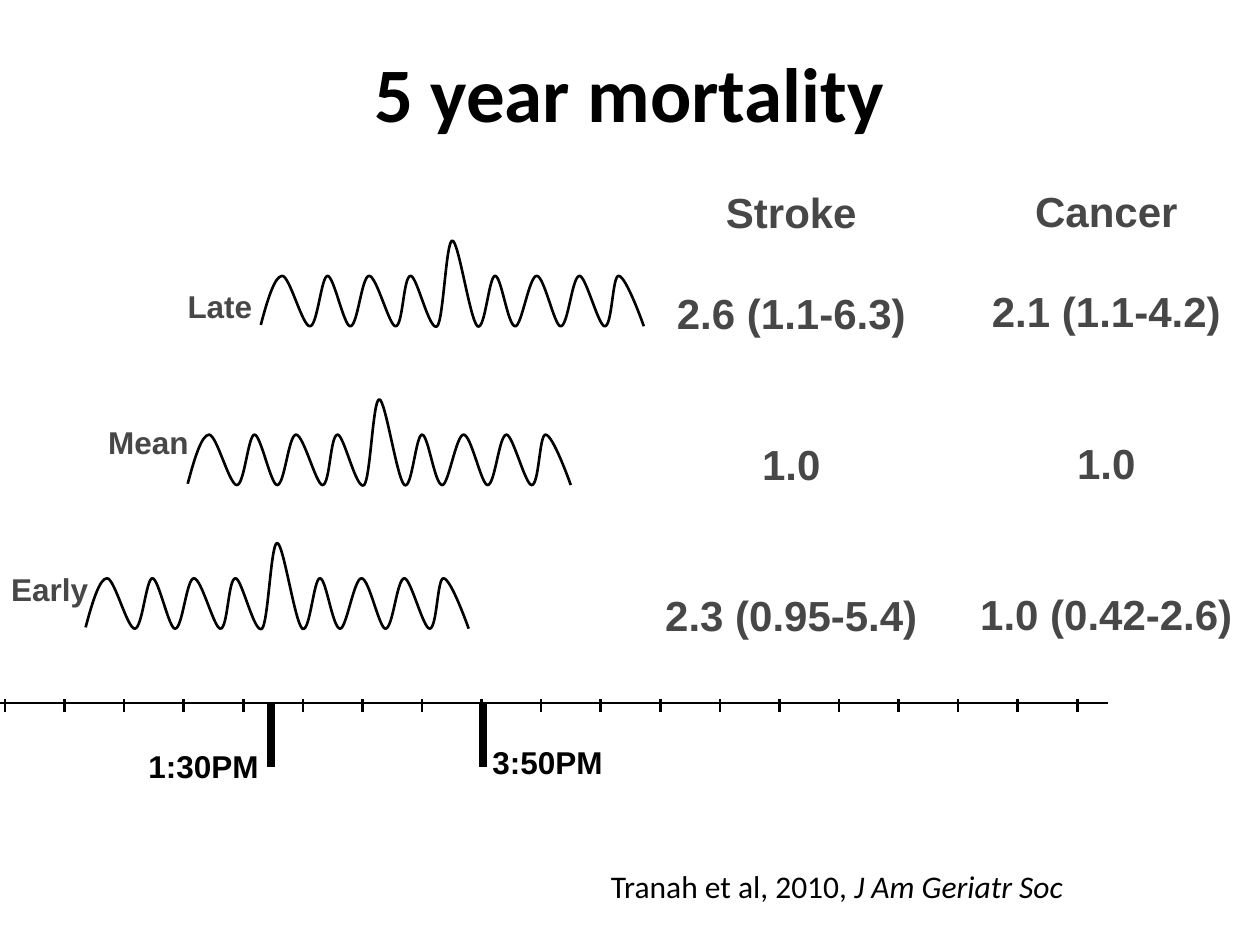
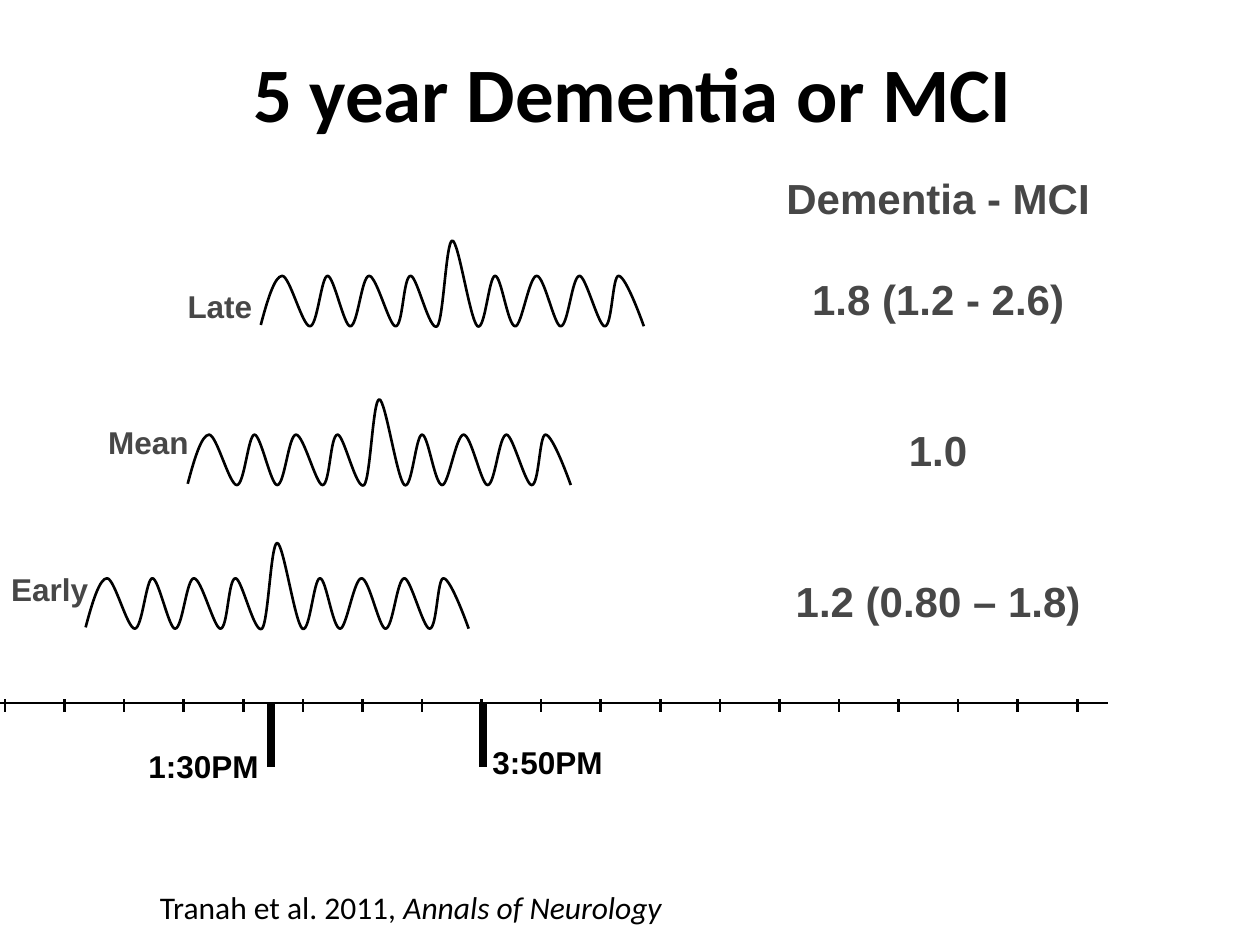
import dataclasses

import lxml.etree
import pptx
import pptx.dml.color
import pptx.enum.shapes
import pptx.enum.text
import pptx.oxml.ns
import pptx.util

PX = 9144
SLIDE_SIZE = (1000, 750)


@dataclasses.dataclass(frozen=True)
class Theme:
    ink: str = "000000"
    grey: str = "474747"
    heading_font: str = "Calibri"
    label_font: str = "Arial"
    title_size: int = 44
    result_size: int = 24
    label_size: int = 18
    blank_line: float = 28.8
    thin: float = 1.5
    thick: float = 4.5


THEME = Theme()

SLIDES = [
    {
        "title": ("5 year mortality", (33, 22, 933, 101)),
        "results": [
            (["Stroke", "2.6 (1.1-6.3)", "1.0", "2.3 (0.95-5.4)"], (514, 143, 228, 374)),
            (["Cancer", "2.1 (1.1-4.2)", "1.0", "1.0 (0.42-2.6)"], (764, 142, 228, 374)),
        ],
        "citation": ("Tranah et al, 2010, ", "J Am Geriatr Soc", (475, 683, 450, 40)),
    },
    {
        "title": ("5 year Dementia or MCI", (4, 22, 996, 101)),
        "results": [
            (["Dementia - MCI", "1.8 (1.2 - 2.6)", "1.0", "1.2 (0.80 – 1.8)"],
             (500, 132, 489, 374)),
        ],
        "citation": ("Tranah et al. 2011, ", "Annals of Neurology", (117, 700, 442, 40)),
    },
]

RHYTHMS = [
    ("Late", (139, 226, 114, 37), (207, 191)),
    ("Mean", (76, 334, 122, 37), (149, 317)),
    ("Early", (-1, 451, 126, 37), (68, 431)),
]
BLANKS_BEFORE_RESULT = [0, 1, 2, 2]

WAVE_START = (0, 67)
WAVE_CURVES = [
    ((5, 48), (11, 28), (17, 28)),
    ((23, 28), (33, 68), (39, 68)),
    ((45, 68), (48, 28), (53, 28)),
    ((58, 28), (66, 68), (71, 68)),
    ((77, 68), (80, 28), (86, 28)),
    ((92, 28), (102, 68), (107, 68)),
    ((113, 68), (113, 28), (119, 28)),
    ((124, 28), (134, 73), (140, 68)),
    ((145, 63), (147, 0), (152, 0)),
    ((157, 0), (166, 63), (172, 68)),
    ((178, 72), (181, 28), (186, 28)),
    ((191, 28), (196, 68), (202, 68)),
    ((207, 68), (213, 28), (219, 28)),
    ((225, 28), (233, 68), (238, 68)),
    ((244, 68), (247, 28), (253, 28)),
    ((258, 28), (268, 68), (273, 68)),
    ((279, 68), (279, 28), (284, 28)),
    ((290, 28), (304, 68), (304, 68)),
]

AXIS = (-3, 558, 879, 558)
TICK_FIRST, TICK_LAST, TICK_COUNT = 4, 855, 19
TICK_TOP, TICK_BOTTOM = 555, 565
MARK_TOP, MARK_BOTTOM = 559, 609
TIME_MARKS = [
    ("3:50PM", 383, (381, 585, 109, 40)),
    ("1:30PM", 215, (108, 588, 109, 40)),
]


def px(*values):
    return [round(v * PX) for v in values]


def rgb(color):
    return pptx.dml.color.RGBColor.from_string(color)


def style_font(font, name, size, color, bold=False):
    font.name = name
    font.size = pptx.util.Pt(size)
    font.color.rgb = rgb(color)
    font.bold = bold


def style_line(line, width):
    line.color.rgb = rgb(THEME.ink)
    line.width = pptx.util.Pt(width)


def add_line(shapes, ends, width):
    line = shapes.add_connector(pptx.enum.shapes.MSO_CONNECTOR.STRAIGHT, *px(*ends))
    style_line(line.line, width)
    lxml.etree.SubElement(line._element.spPr, pptx.oxml.ns.qn("a:effectLst"))


def add_text_frame(shapes, box, wrap=True):
    tf = shapes.add_textbox(*px(*box)).text_frame
    tf.word_wrap = wrap
    tf.auto_size = pptx.enum.text.MSO_AUTO_SIZE.SHAPE_TO_FIT_TEXT
    return tf


def add_label(shapes, text, box, color, wrap=True):
    p = add_text_frame(shapes, box, wrap).paragraphs[0]
    p.text = text
    style_font(p.font, THEME.label_font, THEME.label_size, color, True)
    return p


def set_title(shapes, text, box):
    sp = shapes.title
    sp.left, sp.top, sp.width, sp.height = px(*box)
    tf = sp.text_frame
    tf.vertical_anchor = pptx.enum.text.MSO_ANCHOR.MIDDLE
    p = tf.paragraphs[0]
    p.text = text
    p.alignment = pptx.enum.text.PP_ALIGN.CENTER
    style_font(p.font, THEME.heading_font, THEME.title_size, THEME.ink, True)


def add_time_axis(shapes):
    add_line(shapes, AXIS, THEME.thin)
    ticks = shapes.add_group_shape()
    gap = (TICK_LAST - TICK_FIRST) / (TICK_COUNT - 1)
    for i in range(TICK_COUNT):
        x = TICK_FIRST + i * gap
        add_line(ticks.shapes, (x, TICK_TOP, x, TICK_BOTTOM), THEME.thin)
    for text, x, box in TIME_MARKS:
        add_line(shapes, (x, MARK_TOP, x, MARK_BOTTOM), THEME.thick)
        add_label(shapes, text, box, THEME.ink, wrap=False)


def bend_segments(sp):
    qn = pptx.oxml.ns.qn
    segments = list(sp._element.iter(qn("a:lnTo")))
    outline = segments[0].getparent()
    for i in range(0, len(segments), 3):
        curve = lxml.etree.SubElement(outline, qn("a:cubicBezTo"))
        for segment in segments[i:i + 3]:
            curve.append(segment[0])
            outline.remove(segment)


def add_wave(shapes, left, top):
    points = [WAVE_START] + [point for curve in WAVE_CURVES for point in curve]
    first, *rest = [px(left + x, top + y) for x, y in points]
    builder = shapes.build_freeform(*first)
    builder.add_line_segments(rest, close=False)
    sp = builder.convert_to_shape()
    bend_segments(sp)
    sp.shadow.inherit = False
    sp.fill.background()
    style_line(sp.line, THEME.thin)


def add_results(shapes, lines, box):
    tf = add_text_frame(shapes, box)
    for i, (text, blanks) in enumerate(zip(lines, BLANKS_BEFORE_RESULT)):
        p = tf.add_paragraph() if i else tf.paragraphs[0]
        p.text = text
        p.alignment = pptx.enum.text.PP_ALIGN.CENTER
        p.space_before = pptx.util.Pt(blanks * THEME.blank_line)
        style_font(p.font, THEME.label_font, THEME.result_size, THEME.grey, True)


def add_citation(shapes, authors, journal, box):
    p = add_text_frame(shapes, box).paragraphs[0]
    style_font(p.font, THEME.heading_font, THEME.label_size, THEME.ink)
    for text, italic in ((authors, False), (journal, True)):
        r = p.add_run()
        r.text = text
        r.font.italic = italic


def main():
    prs = pptx.Presentation()
    prs.slide_width, prs.slide_height = px(*SLIDE_SIZE)
    for content in SLIDES:
        shapes = prs.slides.add_slide(prs.slide_layouts[5]).shapes
        set_title(shapes, *content["title"])
        add_time_axis(shapes)
        for name, box, corner in RHYTHMS:
            add_label(shapes, name, box, THEME.grey).line_spacing = 0.9
            add_wave(shapes, *corner)
        for lines, box in content["results"]:
            add_results(shapes, lines, box)
        add_citation(shapes, *content["citation"])
    prs.save("out.pptx")


if __name__ == "__main__":
    main()
